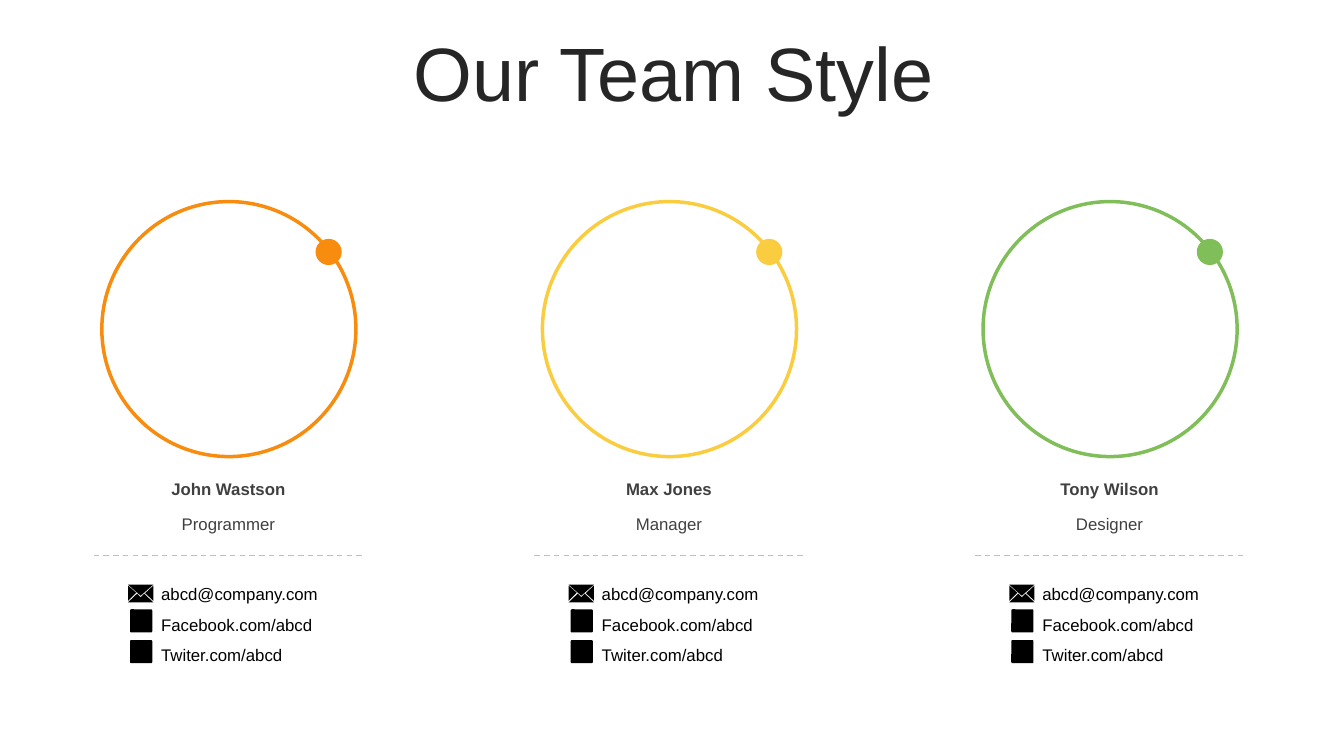
from dataclasses import dataclass

from lxml import etree
from pptx import Presentation
from pptx.dml.color import RGBColor
from pptx.enum.dml import MSO_LINE
from pptx.enum.shapes import MSO_CONNECTOR, MSO_SHAPE
from pptx.enum.text import MSO_ANCHOR, MSO_AUTO_SIZE, PP_ALIGN
from pptx.oxml.ns import qn
from pptx.util import Inches, Pt

OVAL = MSO_SHAPE.OVAL
ROUND = MSO_SHAPE.ROUNDED_RECTANGLE
STRAIGHT = MSO_CONNECTOR.STRAIGHT
DASH = MSO_LINE.DASH
MIDDLE = MSO_ANCHOR.MIDDLE
GROW = MSO_AUTO_SIZE.SHAPE_TO_FIT_TEXT
LEFT, CENTER = PP_ALIGN.LEFT, PP_ALIGN.CENTER


@dataclass(frozen=True)
class Theme:
    """Colours, font and type sizes of the slide."""
    font: str = "Arial"
    title: RGBColor = RGBColor(0x26, 0x26, 0x26)
    text: RGBColor = RGBColor(0x40, 0x40, 0x40)
    ink: RGBColor = RGBColor(0, 0, 0)
    rule: RGBColor = RGBColor(0xBF, 0xBF, 0xBF)
    orange: RGBColor = RGBColor(0xF7, 0x8C, 0x0E)
    yellow: RGBColor = RGBColor(0xF9, 0xCD, 0x3F)
    green: RGBColor = RGBColor(0x80, 0xBE, 0x5A)
    big: int = 54
    small: int = 12


THEME = Theme()
TEAM = [
    ("John Wastson", "Programmer", THEME.orange),
    ("Max Jones", "Manager", THEME.yellow),
    ("Tony Wilson", "Designer", THEME.green),
]
LINKS = ["abcd@company.com", "Facebook.com/abcd", "Twiter.com/abcd"]
FOLDS = [
    [(0, 0), (50, 0), (25, 22)],
    [(0, 2), (16, 16), (0, 32)],
    [(50, 2), (50, 32), (34, 17)],
    [(32, 18), (50, 35), (0, 35), (18, 18), (25, 25)],
]


def add_text(slide, box, text, size, color, align=LEFT, bold=False):
    """Add one line of text in a box and return its frame."""
    frame = slide.shapes.add_textbox(*map(Inches, box)).text_frame
    frame.word_wrap = True
    frame.text = text
    para = frame.paragraphs[0]
    para.alignment = align
    font = para.runs[0].font
    font.name, font.size, font.bold = THEME.font, Pt(size), bold
    font.color.rgb = color
    return frame


def add_label(slide, box, text, color, align=LEFT, bold=False):
    """Add a small label whose box grows with its text."""
    frame = add_text(slide, box, text, THEME.small, color, align, bold)
    frame.auto_size = GROW


def paint(shape, color):
    """Fill a shape with one colour, without line or shadow."""
    shape.shadow.inherit = False
    shape.fill.solid()
    shape.fill.fore_color.rgb = color
    shape.line.fill.background()


def add_title(slide, box):
    """Add the slide heading."""
    frame = add_text(slide, box, "Our Team Style", THEME.big, THEME.title, CENTER)
    frame.vertical_anchor = MIDDLE
    frame.paragraphs[0].line_spacing = 0.9


def add_ring(slide, left, top, color):
    """Add a portrait ring with a dot on its rim."""
    ring = slide.shapes.add_shape(
        OVAL, Inches(left), Inches(top), Inches(2.52), Inches(2.53))
    ring.shadow.inherit = False
    ring.fill.background()
    ring.line.color.rgb = color
    ring.line.width = Pt(2.5)
    dot = slide.shapes.add_shape(
        OVAL, Inches(left + 2.12), Inches(top + 0.37), Inches(0.26), Inches(0.26))
    paint(dot, color)


def add_rule(slide, left, top, width):
    """Add a dashed divider."""
    rule = slide.shapes.add_connector(
        STRAIGHT, Inches(left), Inches(top), Inches(left + width), Inches(top))
    rule.line.color.rgb = THEME.rule
    rule.line.width = Pt(1)
    rule.line.dash_style = DASH
    etree.SubElement(rule._element.spPr, qn("a:effectLst"))


def add_mail(slide, left, top):
    """Add an envelope built from its folds."""
    pen = slide.shapes.build_freeform(*FOLDS[0][0], scale=Inches(0.005))
    for fold in FOLDS:
        pen.move_to(*fold[0])
        pen.add_line_segments(fold[1:], close=True)
    paint(pen.convert_to_shape(Inches(left), Inches(top)), THEME.ink)


def add_badge(slide, left, top):
    """Add a plain rounded badge."""
    badge = slide.shapes.add_shape(
        ROUND, Inches(left), Inches(top), Inches(0.22), Inches(0.23))
    badge.adjustments[0] = 0.06
    paint(badge, THEME.ink)


def add_links(slide, left, top):
    """Add the contact lines with their icons."""
    for i, link in enumerate(LINKS):
        y = top + 0.305 * i
        if i == 0:
            add_mail(slide, left, y + 0.06)
        else:
            add_badge(slide, left + 0.02, y)
        add_label(slide, (left + 0.23, y, 1.77, 0.3), link, THEME.ink)


def add_member(slide, box, name, role, color):
    """Add one team member column."""
    left, top, width = box
    add_ring(slide, left + 0.08, top, color)
    add_label(slide, (left + 0.24, top + 2.7, 2.19, 0.3), name,
              THEME.text, CENTER, True)
    add_label(slide, (left + 0.24, top + 3.05, 2.19, 0.3), role,
              THEME.text, CENTER)
    add_rule(slide, left, top + 3.51, width)
    add_links(slide, left + 0.34, top + 3.74)


def main():
    """Build the team slide and save it."""
    deck = Presentation()
    deck.slide_width, deck.slide_height = Inches(13.33), Inches(7.5)
    slide = deck.slides.add_slide(deck.slide_layouts[6])
    add_title(slide, (0.35, 0.37, 12.66, 0.79))
    for i, member in enumerate(TEAM):
        add_member(slide, (0.93 + 4.37 * i, 2, 2.69), *member)
    deck.save("out.pptx")


if __name__ == "__main__":
    main()
